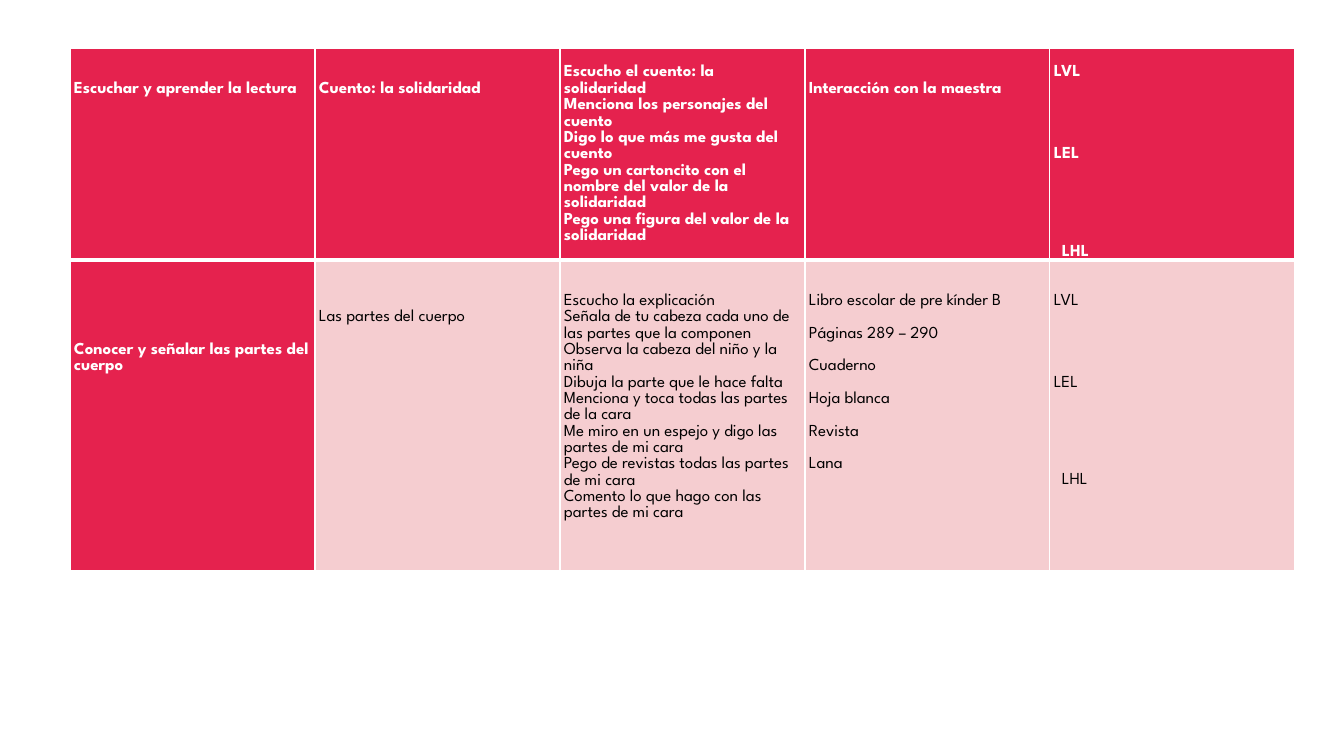
from lxml import etree
from pptx import Presentation
from pptx.dml.color import RGBColor
from pptx.oxml.ns import qn
from pptx.util import Pt

PX = 9071.43  # EMU in one px
LINE_PX = 16.3
LINE_PT = 11.65
FONT = "League Spartan"
RED, PINK, WHITE, BLACK = "E5224E", "F5CDD0", "FFFFFF", "000000"

COLUMN_WIDTH = 245
ROW_HEIGHTS = (212, 310)
LHL_INDENT = 8

# Each cell lists (empty lines above, text).
ROWS = [
    [
        [(2, "Escuchar y aprender la lectura")],
        [(2, "Cuento: la solidaridad")],
        [
            (1, "Escucho el cuento: la solidaridad"),
            (0, "Menciona los personajes del cuento"),
            (0, "Digo lo que más me gusta del cuento"),
            (0, "Pego un cartoncito con el nombre del valor de la solidaridad"),
            (0, "Pego una figura del valor de la solidaridad"),
        ],
        [(2, "Interacción con la maestra")],
        [(1, "LVL"), (4, "LEL"), (5, "LHL")],
    ],
    [
        [(5, "Conocer y señalar las partes del cuerpo")],
        [(3, "Las partes del cuerpo")],
        [
            (2, "Escucho la explicación"),
            (0, "Señala de tu cabeza cada uno de las partes que la componen"),
            (0, "Observa la cabeza del niño y la niña"),
            (0, "Dibuja la parte que le hace falta"),
            (0, "Menciona y toca todas las partes de la cara"),
            (0, "Me miro en un espejo y digo las partes de mi cara"),
            (0, "Pego de revistas todas las partes de mi cara"),
            (0, "Comento lo que hago con las partes de mi cara"),
        ],
        [
            (2, "Libro escolar de pre kínder B"),
            (1, "Páginas 289 – 290"),
            (1, "Cuaderno"),
            (1, "Hoja blanca"),
            (1, "Revista"),
            (1, "Lana"),
        ],
        [(2, "LVL"), (4, "LEL"), (5, "LHL")],
    ],
]


def px(length):
    return round(length * PX)


def color(hex_value):
    return RGBColor.from_string(hex_value)


def set_borders(cell, widths):
    """Add white borders; widths maps a side letter to points."""
    properties = cell._tc.get_or_add_tcPr()
    for side, width in widths.items():
        line = etree.SubElement(properties, qn(f"a:ln{side}"), w=str(Pt(width)))
        fill = etree.SubElement(line, qn("a:solidFill"))
        etree.SubElement(fill, qn("a:srgbClr"), val=WHITE)


def write_cell(cell, entries, text_color, bold):
    cell.margin_left = cell.margin_right = px(4)
    cell.margin_top = px(entries[0][0] * LINE_PX)
    cell.margin_bottom = 0
    frame = cell.text_frame
    for index, (empty_lines, text) in enumerate(entries):
        para = frame.paragraphs[0] if index == 0 else frame.add_paragraph()
        para.text = text
        para.line_spacing = 1.06
        if index and empty_lines:
            para.space_before = Pt(empty_lines * LINE_PT)
        if text == "LHL":
            para._p.get_or_add_pPr().set("marL", str(px(LHL_INDENT)))
        para.font.name = FONT
        para.font.size = Pt(12)
        para.font.bold = bold
        para.font.color.rgb = color(text_color)


def add_plan_table(page):
    column_count = len(ROWS[0])
    table = page.shapes.add_table(
        len(ROWS), column_count, px(70), px(48),
        px(COLUMN_WIDTH * column_count), px(sum(ROW_HEIGHTS)),
    ).table
    for column in table.columns:
        column.width = px(COLUMN_WIDTH)
    for row_index, row in enumerate(ROWS):
        table.rows[row_index].height = px(ROW_HEIGHTS[row_index])
        is_header = row_index == 0
        borders = {"L": 1, "R": 1, "T": 1 if is_header else 3, "B": 3 if is_header else 1}
        for column_index, entries in enumerate(row):
            cell = table.cell(row_index, column_index)
            strong = is_header or column_index == 0
            set_borders(cell, borders)
            cell.fill.solid()
            cell.fill.fore_color.rgb = color(RED if strong else PINK)
            write_cell(cell, entries, WHITE if strong else BLACK, strong)


def main():
    deck = Presentation()
    deck.slide_width, deck.slide_height = px(1344), px(756)
    page = deck.slides.add_slide(deck.slide_layouts[6])
    add_plan_table(page)
    deck.save("out.pptx")


if __name__ == "__main__":
    main()
